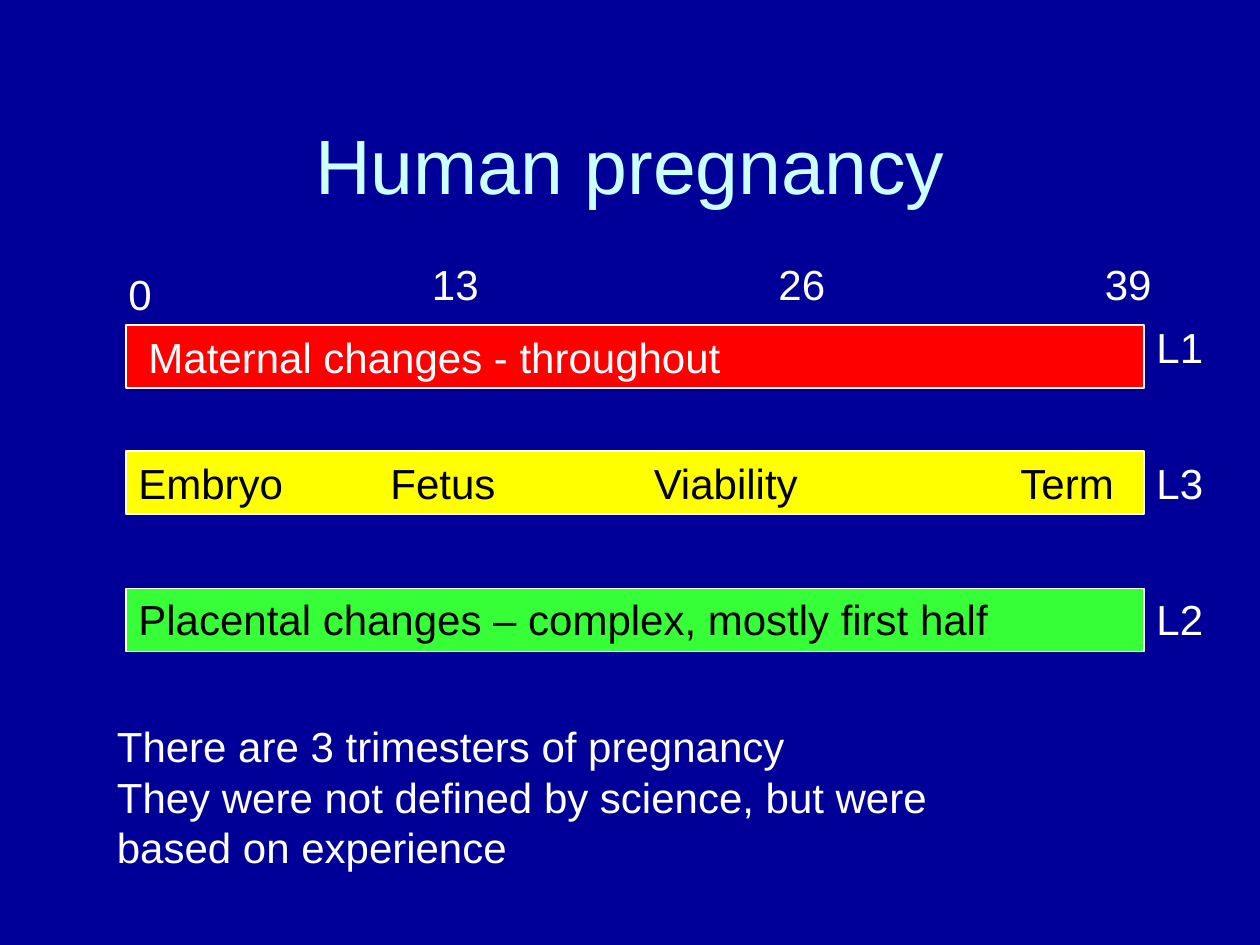
from lxml import etree
from pptx import Presentation
from pptx.dml.color import RGBColor
from pptx.enum import shapes, text
from pptx.oxml import ns
from pptx.util import Inches, Pt

COLORS = {
    "background": "000099", "title": "CCFFFF", "light": "FFFFFF", "dark": "000000",
    "maternal": "FF0000", "fetal": "FFFF00", "placental": "37FF37",
}
WEEKS = [("0", 0.92, 2.08), ("13", 3.33, 2), ("26", 6.08, 2), ("39", 8.67, 2)]
STAGE_TABS = (2, 4.09, 7)
BARS = [
    ("maternal", 2.58, "Maternal changes - throughout", "light", (1.08, 2.58, 4.79, 0.5), "L1", 2.5),
    ("fetal", 3.58, "Embryo\tFetus\tViability\tTerm", "dark", (1, 3.58, 8.58, 0.5), "L3", 3.58),
    ("placental", 4.67, "Placental changes – complex, mostly first half", "dark",
     (1, 4.66, 8.08, 0.5), "L2", 4.66),
]
SUMMARY = [
    "There are 3 trimesters of pregnancy",
    "They were not defined by science, but were based on experience",
]


def rgb(name):
    """Return the named palette colour."""
    return RGBColor.from_string(COLORS[name])


def add_text(slide, box, lines, color="light", size=24, wrap=True, **formats):
    """Write paragraphs in a text box and return its frame."""
    frame = slide.shapes.add_textbox(*map(Inches, box)).text_frame
    frame.word_wrap = wrap
    frame.vertical_anchor = formats.pop("anchor", text.MSO_ANCHOR.TOP)
    frame.text = "\n".join(lines)
    for paragraph in frame.paragraphs:
        for key, value in formats.items():
            setattr(paragraph, key, value)
        for run in paragraph.runs:
            for key, value in {"name": "Arial", "size": Pt(size)}.items():
                setattr(run.font, key, value)
            run.font.color.rgb = rgb(color)
    return frame


def set_tabs(paragraph, stops):
    """Give a paragraph left tab stops, in inches."""
    properties = paragraph._p.get_or_add_pPr()
    tab_list = etree.SubElement(properties, ns.qn("a:tabLst"))
    for stop in stops:
        etree.SubElement(tab_list, ns.qn("a:tab"), pos=str(int(Inches(stop))), algn="l")


def add_title(slide, box):
    """Place the centred heading."""
    add_text(slide, box, ["Human pregnancy"], "title", 44,
             anchor=text.MSO_ANCHOR.MIDDLE, alignment=text.PP_ALIGN.CENTER)


def add_weeks(slide):
    """Place the week numbers above the bars."""
    for week, left, top in WEEKS:
        width = 0.39 if len(week) == 1 else 0.58
        add_text(slide, (left, top, width, 0.5), [week], wrap=False)


def add_bar(slide, box, fill, label, label_color, label_box, lecture, lecture_top):
    """Draw one timeline bar with its label and lecture number."""
    bar = slide.shapes.add_shape(shapes.MSO_SHAPE.RECTANGLE, *map(Inches, box))
    bar.shadow.inherit = False
    bar.fill.solid()
    bar.fill.fore_color.rgb = rgb(fill)
    bar.line.color.rgb = rgb("light")
    bar.line.width = Pt(0.75)
    frame = add_text(slide, label_box, [label], label_color, wrap=fill != "maternal")
    if "\t" in label:
        set_tabs(frame.paragraphs[0], STAGE_TABS)
    left, _, width, height = box
    add_text(slide, (left + width, lecture_top, 0.58, height), [lecture], wrap=False)


def main():
    """Build and save the slide."""
    deck = Presentation()
    deck.slide_width, deck.slide_height = Inches(10), Inches(7.5)
    slide = deck.slides.add_slide(deck.slide_layouts[6])
    slide.background.fill.solid()
    slide.background.fill.fore_color.rgb = rgb("background")
    add_title(slide, (0.75, 0.67, 8.5, 1.25))
    add_weeks(slide)
    for fill, top, *labels in BARS:
        add_bar(slide, (1, top, 8.08, 0.5), fill, *labels)
    add_text(slide, (0.83, 5.67, 7.33, 1.31), SUMMARY)
    deck.save("out.pptx")


if __name__ == "__main__":
    main()
